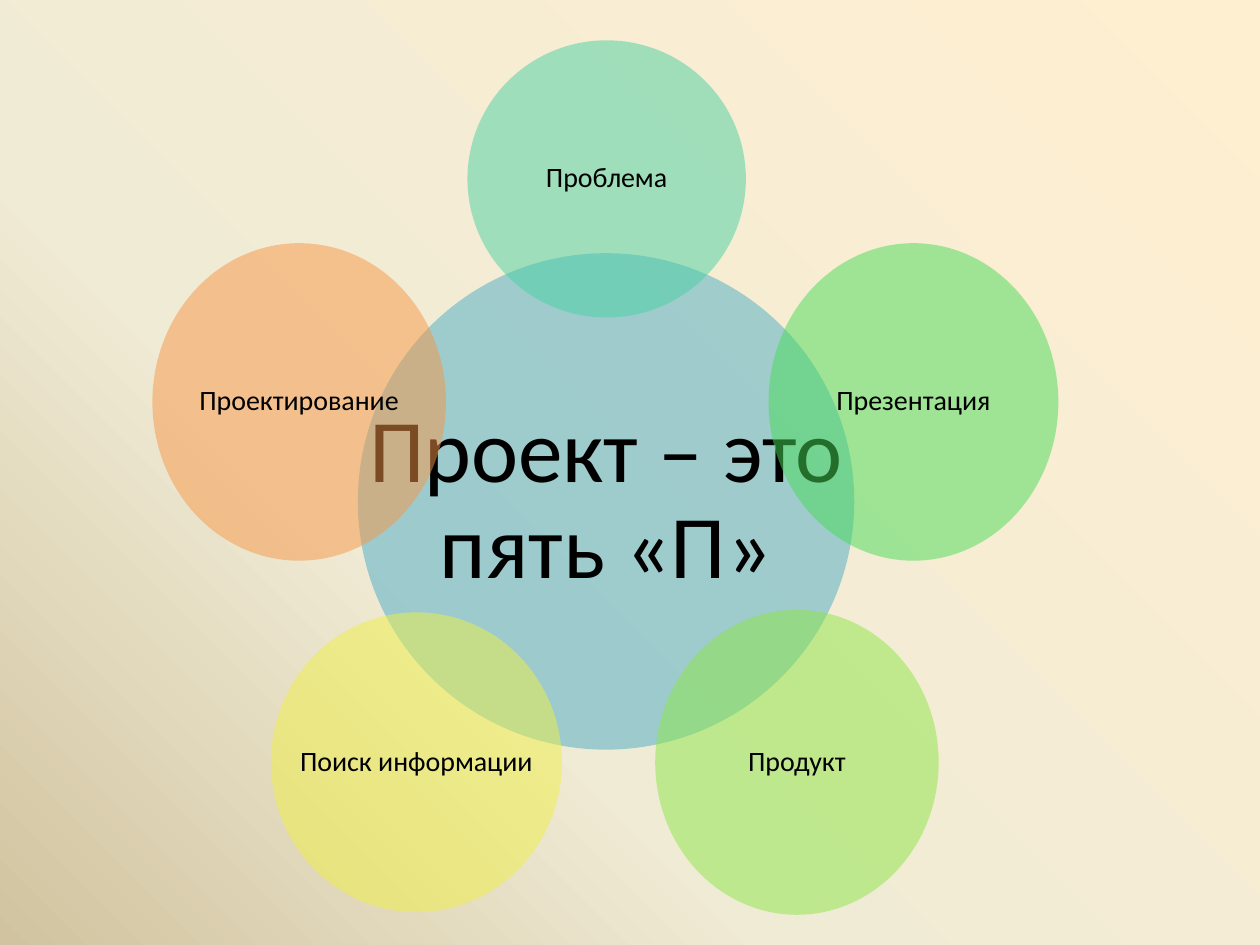
from dataclasses import dataclass

from lxml import etree
from pptx import Presentation
from pptx.dml.color import RGBColor
from pptx.enum.shapes import MSO_SHAPE
from pptx.enum.text import MSO_ANCHOR, MSO_AUTO_SIZE, PP_ALIGN
from pptx.oxml.ns import qn
from pptx.util import Inches, Pt

OVAL = MSO_SHAPE.OVAL
MIDDLE = MSO_ANCHOR.MIDDLE
CENTER = PP_ALIGN.CENTER
FIXED = MSO_AUTO_SIZE.NONE
FONT = "Calibri"

COLORS = {
    "text": "000000",
    "hub": "4BACC6",
    "mint": "49D1A3",
    "green": "47DC57",
    "lime": "8DE646",
    "yellow": "EEEF46",
    "orange": "F79646",
    "cream": "FFEFD1",
    "ivory": "F0EBD5",
    "sand": "D1C39F",
}
STOPS = [(0, "cream"), (65, "ivory"), (100, "sand")]


@dataclass
class Disc:
    text: str
    color: str
    left: float
    top: float
    width: float
    height: float

    def box(self) -> tuple:
        return tuple(map(Inches, (self.left, self.top, self.width, self.height)))


HUB = Disc("Проект – это пять «П»", "hub", 2.84, 2.01, 3.94, 3.94)
PETALS = [
    Disc("Проблема", "mint", 3.71, 0.32, 2.21, 2.2),
    Disc("Презентация", "green", 6.1, 1.93, 2.3, 2.52),
    Disc("Продукт", "lime", 5.2, 4.84, 2.25, 2.42),
    Disc("Поиск информации", "yellow", 2.15, 4.86, 2.31, 2.38),
    Disc("Проектирование", "orange", 1.21, 1.93, 2.33, 2.52),
]


def paint_back(slide) -> None:
    fill = slide.background.fill
    fill.gradient()
    fill.gradient_angle = 225
    stops = slide.element.find(".//" + qn("a:gsLst"))
    for old in list(stops):
        stops.remove(old)
    for place, name in STOPS:
        stop = etree.SubElement(stops, qn("a:gs"), pos=str(place * 1000))
        etree.SubElement(stop, qn("a:srgbClr"), val=COLORS[name])


def add_disc(slide, disc: Disc):
    oval = slide.shapes.add_shape(OVAL, *disc.box())
    oval.shadow.inherit = False
    oval.fill.solid()
    oval.fill.fore_color.rgb = RGBColor.from_string(COLORS[disc.color])
    tint = oval.element.spPr.find(".//" + qn("a:srgbClr"))
    etree.SubElement(tint, qn("a:alpha"), val="50000")
    oval.line.fill.background()
    return oval


def set_text(shape, text: str, size: int, inset: float) -> None:
    frame = shape.text_frame
    frame.text = text
    frame.word_wrap = True
    frame.auto_size = FIXED
    frame.vertical_anchor = MIDDLE
    frame.margin_left = frame.margin_right = Inches(inset)
    frame.margin_top = frame.margin_bottom = Inches(inset)
    para = frame.paragraphs[0]
    para.alignment = CENTER
    para.line_spacing = 0.9
    font = para.runs[0].font
    font.name = FONT
    font.size = Pt(size)
    font.color.rgb = RGBColor.from_string(COLORS["text"])


def add_hub(slide) -> None:
    oval = add_disc(slide, HUB)
    title = slide.shapes.title
    title.left, title.top, title.width, title.height = HUB.box()
    set_text(title, HUB.text, 51, 0.07)
    oval.element.addnext(title.element)


def add_petal(slide, disc: Disc) -> None:
    add_disc(slide, disc)
    label = slide.shapes.add_textbox(*disc.box())
    set_text(label, disc.text, 16, 0.02)


def main() -> None:
    deck = Presentation()
    deck.slide_width = Inches(10)
    deck.slide_height = Inches(7.5)
    slide = deck.slides.add_slide(deck.slide_layouts[5])
    paint_back(slide)
    add_hub(slide)
    for disc in PETALS:
        add_petal(slide, disc)
    deck.save("out.pptx")


if __name__ == "__main__":
    main()
